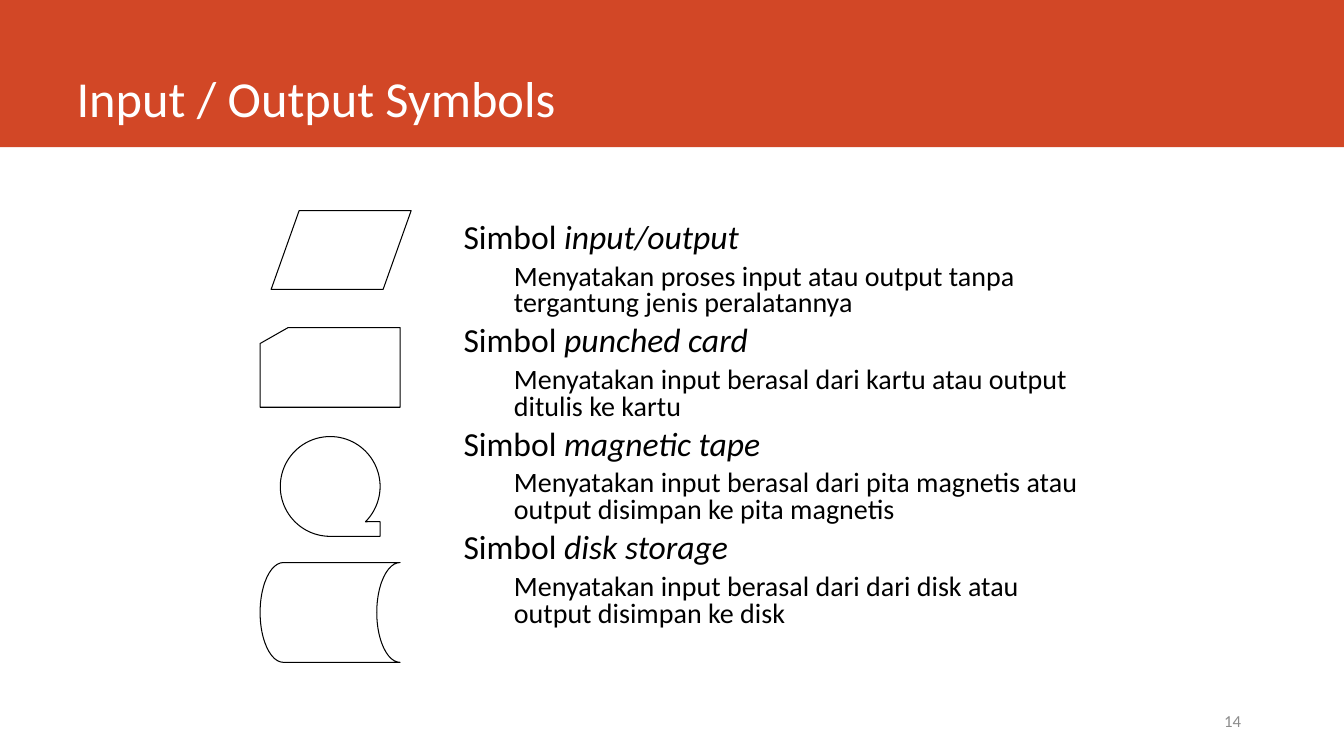
from dataclasses import dataclass

from pptx import Presentation
from pptx import util as u
from pptx.dml.color import RGBColor
from pptx.enum import shapes, text

Pt = u.Pt
Kind = shapes.MSO_SHAPE

ORANGE = RGBColor(0xD2, 0x47, 0x26)
WHITE = RGBColor(0xFF, 0xFF, 0xFF)
BLACK = RGBColor(0x00, 0x00, 0x00)
GREY = RGBColor(0x8C, 0x8C, 0x8C)
FONT = "Calibri"
PAGE_WIDTH = 960
PAGE_HEIGHT = 540


@dataclass(frozen=True)
class Symbol:
    kind: Kind
    left: float
    top: float
    width: float
    height: float
    name: str
    meaning: str


SYMBOLS = [
    Symbol(Kind.FLOWCHART_DATA, 193.7, 150.5, 100, 56.2, "input/output",
           "Menyatakan proses input atau output tanpa tergantung jenis peralatannya"),
    Symbol(Kind.FLOWCHART_CARD, 185.8, 234, 100, 56.9, "punched card",
           "Menyatakan input berasal dari kartu atau output ditulis ke kartu"),
    Symbol(Kind.FLOWCHART_SEQUENTIAL_ACCESS_STORAGE, 200.2, 311.8, 71.3, 71.3, "magnetic tape",
           "Menyatakan input berasal dari pita magnetis atau output disimpan ke pita magnetis"),
    Symbol(Kind.FLOWCHART_STORED_DATA, 185.8, 401.8, 100, 71.3, "disk storage",
           "Menyatakan input berasal dari dari disk atau output disimpan ke disk"),
]


def add_span(para, wording: str, size: float, color: RGBColor, italic: bool = False) -> None:
    span = para.add_run()
    span.text = wording
    span.font.name = FONT
    span.font.size = Pt(size)
    span.font.italic = italic
    span.font.color.rgb = color


def add_text_box(page, left: float, top: float, width: float, height: float):
    box = page.shapes.add_textbox(Pt(left), Pt(top), Pt(width), Pt(height))
    box.text_frame.word_wrap = True
    return box.text_frame


def add_band(page):
    band = page.shapes.add_shape(Kind.RECTANGLE, 0, 0, Pt(PAGE_WIDTH), Pt(105.1))
    band.shadow.inherit = False
    band.fill.solid()
    band.fill.fore_color.rgb = ORANGE
    band.line.fill.background()
    return band


def format_title(title, wording: str) -> None:
    title.left, title.top, title.width, title.height = Pt(47.5), Pt(0), Pt(846.7), Pt(95)
    frame = title.text_frame
    frame.auto_size = text.MSO_AUTO_SIZE.NONE
    frame.vertical_anchor = text.MSO_ANCHOR.BOTTOM
    para = frame.paragraphs[0]
    para.alignment = text.PP_ALIGN.LEFT
    add_span(para, wording, 36, WHITE)


def add_explanations(page, symbols: list[Symbol]) -> None:
    frame = add_text_box(page, 324, 156.2, 462.2, 324)
    for index, symbol in enumerate(symbols):
        heading = frame.add_paragraph() if index else frame.paragraphs[0]
        add_span(heading, "Simbol ", 24, BLACK)
        add_span(heading, symbol.name, 24, BLACK, italic=True)
        detail = frame.add_paragraph()
        detail.level = 1
        properties = detail._p.get_or_add_pPr()
        properties.set("marL", str(Pt(36)))
        properties.set("indent", "0")
        add_span(detail, symbol.meaning, 20, BLACK)
        for para in (heading, detail):
            para.line_spacing = 0.8
            para.space_before = Pt(6.2)


def add_symbol(page, symbol: Symbol) -> None:
    outline = page.shapes.add_shape(symbol.kind, Pt(symbol.left), Pt(symbol.top),
                                    Pt(symbol.width), Pt(symbol.height))
    outline.shadow.inherit = False
    outline.fill.solid()
    outline.fill.fore_color.rgb = WHITE
    outline.line.color.rgb = BLACK
    outline.line.width = Pt(0.75)


def main() -> None:
    deck = Presentation()
    deck.slide_width, deck.slide_height = Pt(PAGE_WIDTH), Pt(PAGE_HEIGHT)
    page = deck.slides.add_slide(deck.slide_layouts.get_by_name("Title Only"))

    # Title on its band, with the band behind
    title = page.shapes.title
    format_title(title, "Input / Output Symbols")
    title.element.addprevious(add_band(page).element)

    # Page number
    number = add_text_box(page, 635.8, 500.4, 257.8, 28.8)
    number.vertical_anchor = text.MSO_ANCHOR.MIDDLE
    number.paragraphs[0].alignment = text.PP_ALIGN.RIGHT
    add_span(number.paragraphs[0], "14", 12, GREY)

    # Explanations and their symbols
    add_explanations(page, SYMBOLS)
    for symbol in SYMBOLS:
        add_symbol(page, symbol)

    deck.save("out.pptx")


if __name__ == "__main__":
    main()
